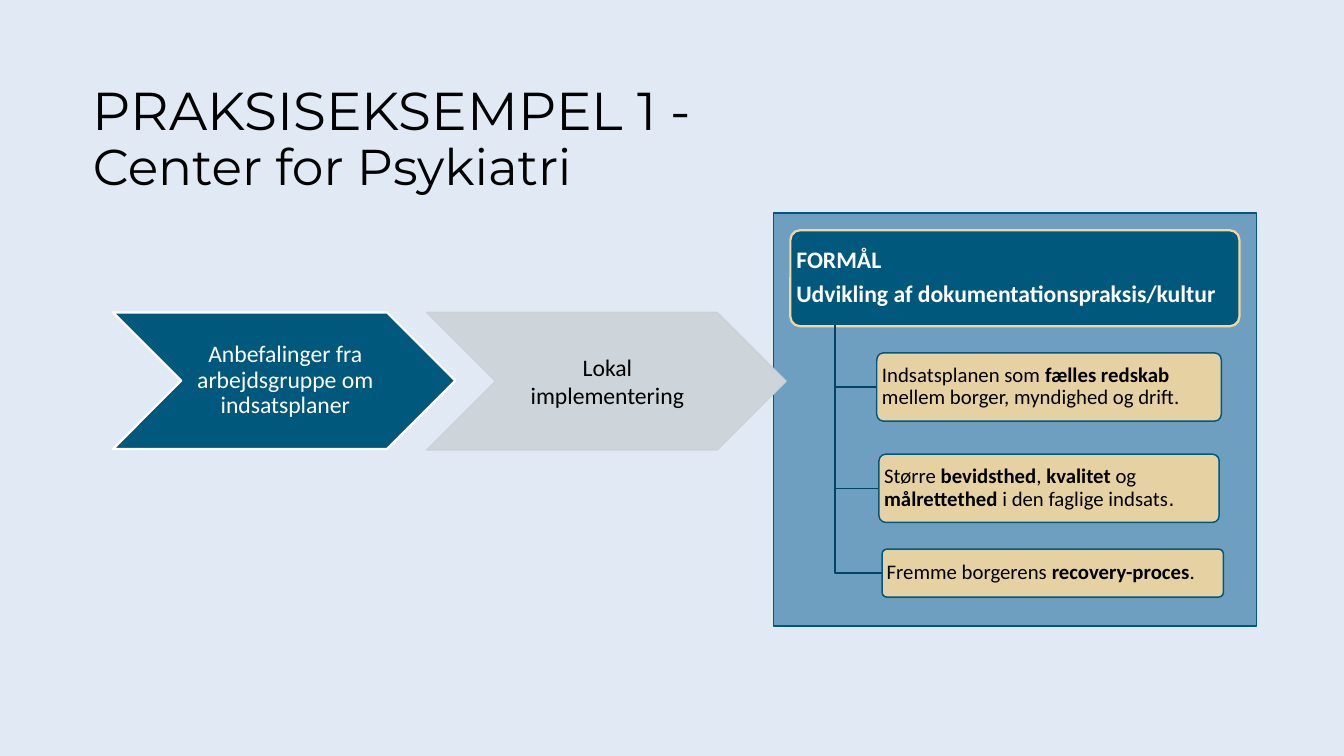
"""Build the slide on the practice example from Center for Psykiatri."""
import dataclasses

import pptx
import pptx.dml.color
import pptx.enum.shapes
import pptx.enum.text
import pptx.oxml
import pptx.oxml.ns
import pptx.util

SHAPES = pptx.enum.shapes.MSO_SHAPE
ALIGN = pptx.enum.text.PP_ALIGN
WIDTH, HEIGHT = pptx.util.Inches(12.6), pptx.util.Inches(7.09)
COLUMNS, ROWS = 126, 70.9


@dataclasses.dataclass(frozen=True)
class Theme:
    """Colours, fonts and type sizes of the slide."""
    backdrop: str = "E1E9F4"
    panel: str = "6E9FC0"
    panel_edge: str = "015683"
    navy: str = "00587D"
    branch: str = "004664"
    sand: str = "F3D79F"
    grey: str = "CDD4DA"
    grey_edge: str = "CCD1D7"
    white: str = "FFFFFF"
    black: str = "000000"
    heading_font: str = "Montserrat"
    body_font: str = "Calibri"
    stop_font: str = "DejaVu Sans"
    title: float = 36
    subtitle: float = 34
    lead: float = 16
    goal: float = 14
    stop: float = 13.5


THEME = Theme()
BOLD = {"bold": True}
GOALS = [
    ((82.2, 33.1, 32.3, 6.4), [
        ("Indsatsplanen som ", {}), ("fælles redskab ", BOLD),
        ("mellem borger, myndighed og drift.", {})]),
    ((82.4, 42.6, 31.9, 6.4), [
        ("Større ", {}), ("bevidsthed", BOLD), (", ", {}), ("kvalitet", BOLD),
        (" og ", {}), ("målrettethed", BOLD), (" i den faglige indsats", {}),
        (".", {"name": THEME.stop_font, "size": pptx.util.Pt(THEME.stop)})]),
    ((82.7, 51.5, 32, 4.5), [
        ("Fremme borgerens ", {}), ("recovery-proces", BOLD), (".", {})]),
]


def across(columns):
    """Turn grid columns into a length."""
    return round(WIDTH * columns / COLUMNS)


def down(rows):
    """Turn grid rows into a length."""
    return round(HEIGHT * rows / ROWS)


def place(area):
    """Turn a grid area into left, top, width and height."""
    left, top, width, height = area
    return across(left), down(top), across(width), down(height)


def rgb(colour):
    """Return a colour value from its hex digits."""
    return pptx.dml.color.RGBColor.from_string(colour)


def assign(target, values):
    """Set every attribute named in a dict of format values."""
    for name, value in values.items():
        setattr(target, name, value)


def soften(shape, branch, percent):
    """Set the opacity of a shape's fill or line colour."""
    for colour in shape.element.spPr.xpath(f"{branch}/a:srgbClr"):
        alpha = pptx.oxml.parse_xml(
            f'<a:alpha {pptx.oxml.ns.nsdecls("a")} val="{percent * 1000}"/>')
        colour.append(alpha)


def outline(shape, colour, points):
    """Give a shape a plain line and no shadow."""
    shape.shadow.inherit = False
    shape.line.color.rgb = rgb(colour)
    shape.line.width = pptx.util.Pt(points)


def add_block(slide, kind, area, fill, edge, points=1):
    """Add a filled preset shape on the grid."""
    block = slide.shapes.add_shape(kind, *place(area))
    block.fill.solid()
    block.fill.fore_color.rgb = rgb(fill)
    outline(block, edge, points)
    return block


def add_card(slide, area, fill, edge, points=1):
    """Add a slightly rounded block."""
    card = add_block(slide, SHAPES.ROUNDED_RECTANGLE, area, fill, edge, points)
    card.adjustments[0] = 0.1
    return card


def write(shape, paragraphs, size, colour, font=THEME.body_font, insets=(0, 0, 0, 0),
          align=ALIGN.LEFT, spacing=0.9, after=0.35):
    """Write paragraphs of formatted runs into a shape."""
    left, top, right, bottom = insets
    frame = shape.text_frame
    assign(frame, {
        "word_wrap": True, "vertical_anchor": pptx.enum.text.MSO_ANCHOR.MIDDLE,
        "margin_left": across(left), "margin_top": down(top),
        "margin_right": across(right), "margin_bottom": down(bottom)})
    for index, runs in enumerate(paragraphs):
        paragraph = frame.add_paragraph() if index else frame.paragraphs[0]
        assign(paragraph, {"alignment": align, "line_spacing": spacing,
                           "space_after": pptx.util.Pt(size * after)})
        for text, changes in runs:
            if text == "\n":
                paragraph.add_line_break()
                continue
            run = paragraph.add_run()
            run.text = text
            assign(run.font, {"name": font, "size": pptx.util.Pt(size),
                              "bold": False, **changes})
            run.font.color.rgb = rgb(colour)


def add_branch(slide, left, top, right, bottom):
    """Add an open elbow line running down and then right."""
    builder = slide.shapes.build_freeform(across(left), down(top))
    corners = [(across(left), down(bottom)), (across(right), down(bottom))]
    builder.add_line_segments(corners, close=False)
    branch = builder.convert_to_shape()
    branch.fill.background()
    outline(branch, THEME.branch, 1)


def add_purpose(slide):
    """Add the panel with the purpose and its three goals."""
    insets = (0.3, 0.2, 0.3, 0.2)
    add_block(slide, SHAPES.RECTANGLE, (72.5, 20, 45.3, 38.7),
              THEME.panel, THEME.panel_edge)
    purpose = add_card(slide, (74.1, 21.6, 42.1, 9), THEME.navy, THEME.sand, 1.5)
    write(purpose, [[("FORMÅL", BOLD)],
                    [("Udvikling af dokumentationspraksis/kultur", BOLD)]],
          THEME.lead, THEME.white, insets=insets)
    for area, runs in GOALS:
        left, top, _, height = area
        add_branch(slide, 78.3, 30.5, left, top + height / 2)
        goal = add_card(slide, area, THEME.sand, THEME.navy)
        soften(goal, "a:solidFill", 90)
        write(goal, [runs], THEME.goal, THEME.black, insets=insets)


def add_title(slide):
    """Add the two-line heading."""
    title = slide.shapes.add_textbox(*place((8.7, 6.3, 109.1, 13.7)))
    runs = [("PRAKSISEKSEMPEL 1 -", {}), ("\n", {}),
            ("Center for Psykiatri", {"size": pptx.util.Pt(THEME.subtitle)})]
    write(title, [runs], THEME.title, THEME.black, THEME.heading_font, after=0)


def add_steps(slide):
    """Add the two chevrons that lead to the purpose."""
    layout = {"insets": (0.2, 0.1, 0, 0.1), "align": ALIGN.CENTER}
    advice = add_block(slide, SHAPES.CHEVRON, (10.6, 29.3, 32.1, 12.8),
                       THEME.navy, THEME.white, 1.5)
    write(advice, [[("Anbefalinger fra arbejdsgruppe om indsatsplaner", {})]],
          THEME.lead, THEME.white, **layout)
    rollout = add_block(slide, SHAPES.CHEVRON, (40, 29.3, 33.7, 12.9),
                        THEME.grey, THEME.grey_edge)
    soften(rollout, "a:ln/a:solidFill", 90)
    write(rollout, [[("Lokal", {}), ("\n", {}), ("implementering", {})]],
          THEME.lead, THEME.black, spacing=1.0, after=0, **layout)


def main():
    """Build and save the slide."""
    deck = pptx.Presentation()
    assign(deck, {"slide_width": WIDTH, "slide_height": HEIGHT})
    slide = deck.slides.add_slide(deck.slide_layouts[6])
    slide.background.fill.solid()
    slide.background.fill.fore_color.rgb = rgb(THEME.backdrop)
    add_purpose(slide)
    add_title(slide)
    add_steps(slide)
    deck.save("out.pptx")


if __name__ == "__main__":
    main()
